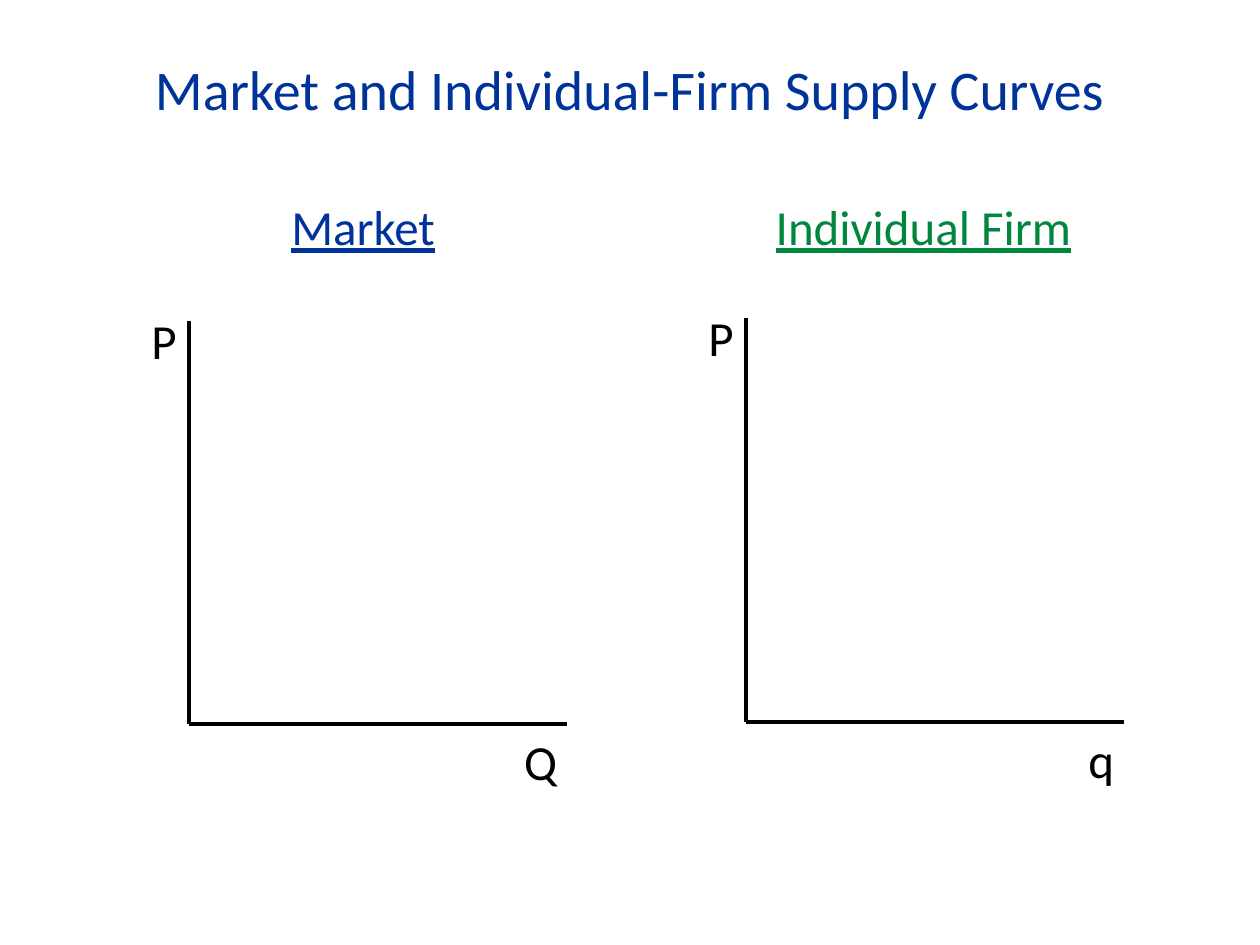
"""Build a slide with empty axes for market and individual-firm supply curves."""
from lxml import etree
from pptx import Presentation
from pptx import util as u
from pptx.dml.color import RGBColor
from pptx.enum import shapes, text
from pptx.oxml import ns

BLUE, GREEN, BLACK = "003399", "00863D", "000000"
AXIS_WIDTH, AXIS_HEIGHT = 7.62, 8.13
LABEL_HEIGHT = 1.45

deck = Presentation()
deck.slide_width, deck.slide_height = u.Cm(25.4), u.Cm(19.05)
slide = deck.slides.add_slide(deck.slide_layouts[6])


def add_label(words, left, top, width, height, color, align, size=28, underline=None):
    label = slide.shapes.add_textbox(u.Cm(left), u.Cm(top), u.Cm(width), u.Cm(height))
    frame = label.text_frame
    frame.word_wrap = True
    frame.vertical_anchor = text.MSO_ANCHOR.TOP
    paragraph = frame.paragraphs[0]
    paragraph.alignment = align
    run = paragraph.add_run()
    run.text = words
    run.font.name = "Calibri"
    run.font.size = u.Pt(size)
    run.font.underline = underline
    run.font.color.rgb = RGBColor.from_string(color)


def add_axis(x1, y1, x2, y2):
    axis = slide.shapes.add_connector(
        shapes.MSO_CONNECTOR.STRAIGHT, u.Cm(x1), u.Cm(y1), u.Cm(x2), u.Cm(y2))
    axis.line.width = u.Pt(2.5)
    axis.line.color.rgb = RGBColor.from_string(BLACK)
    etree.SubElement(axis._element.spPr, ns.qn("a:effectLst"))


center, right = text.PP_ALIGN.CENTER, text.PP_ALIGN.RIGHT
add_label("Market and Individual-Firm Supply Curves",
          1.78, 0.97, 21.84, 1.63, BLUE, center, size=32)

graphs = [
    ("Market", BLUE, 2.34, 9.96, "Q", 3.81, 14.6),
    ("Individual Firm", GREEN, 15.16, 6.91, "q", 15.04, 14.55),
]
for heading, color, heading_left, heading_width, quantity, origin_x, origin_y in graphs:
    axis_top = origin_y - AXIS_HEIGHT
    add_axis(origin_x, axis_top, origin_x, origin_y)
    add_axis(origin_x, origin_y, origin_x + AXIS_WIDTH, origin_y)
    add_label("P", origin_x - 2.97, axis_top - 0.34, 2.97, LABEL_HEIGHT, BLACK, right)
    add_label(quantity, origin_x + 5.18, origin_y + 0.03, 2.49, LABEL_HEIGHT, BLACK, right)
    add_label(heading, heading_left, 3.84, heading_width, LABEL_HEIGHT, color, center,
              underline=True)

deck.save("out.pptx")
